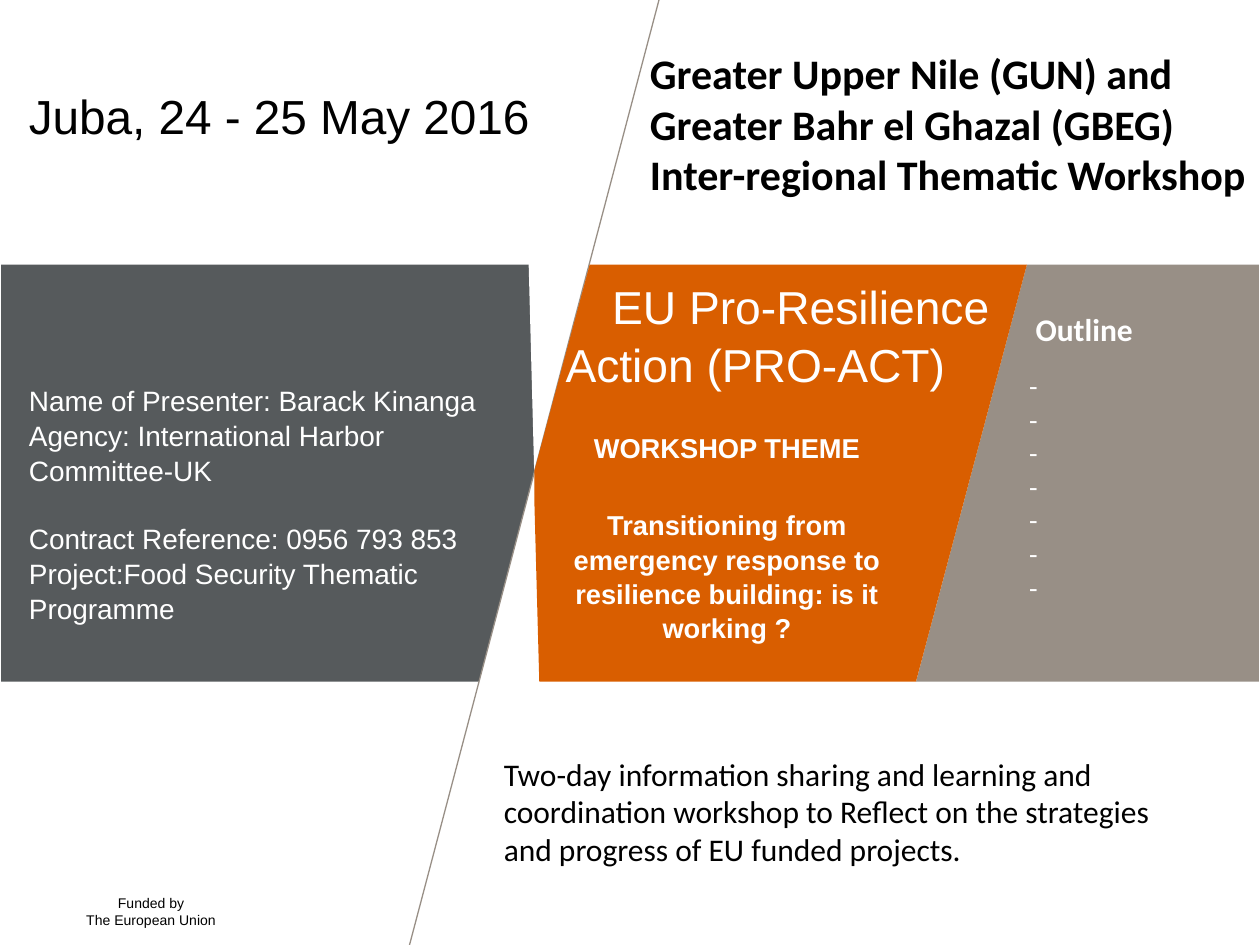
from lxml import etree
from pptx import Presentation
from pptx.dml.color import RGBColor
from pptx.enum.shapes import MSO_CONNECTOR, MSO_SHAPE
from pptx.enum.text import MSO_ANCHOR, PP_ALIGN
from pptx.oxml.ns import qn
from pptx.util import Inches, Pt

LEFT, CENTER = PP_ALIGN.LEFT, PP_ALIGN.CENTER
TOP, MIDDLE, BOTTOM = MSO_ANCHOR.TOP, MSO_ANCHOR.MIDDLE, MSO_ANCHOR.BOTTOM

BLACK = RGBColor(0x00, 0x00, 0x00)
WHITE = RGBColor(0xFF, 0xFF, 0xFF)
SLATE = RGBColor(0x56, 0x5A, 0x5C)
STONE = RGBColor(0x98, 0x8F, 0x86)
ORANGE = RGBColor(0xD9, 0x5E, 0x00)

# Horizontal band and the slanted rule that crosses the slide
BAND_TOP, BAND_END = 2.1, 5.41
RULE = [(5.23, 0), (3.25, 7.5)]
MID = (4.24, 3.75)
WEDGE = [(4.14, 0), MID, RULE[1], (4.33, 7.5), MID, RULE[0]]
GREY_PANEL = [(8.15, BAND_TOP), (9.99, BAND_TOP), (9.99, BAND_END), (7.27, BAND_END)]
THEME_PANEL = [(4.24, 3.74), (4.24, 3.95), (4.28, BAND_END), (7.27, BAND_END),
               (8.15, BAND_TOP), (4.68, BAND_TOP)]

# Each paragraph: text, points of space before
PRESENTER = [
    ("Name of Presenter: Barack Kinanga", 0),
    ("Agency: International Harbor Committee-UK", 0),
    ("Contract Reference: 0956 793 853", 19),
    ("Project:Food Security Thematic Programme", 0),
]
ACTION = [("EU Pro-Resilience Action (PRO-ACT)", 0)]
DATE = [("Juba, 24 - 25 May 2016", 0)]
OUTLINE = [("Outline", 0), ("-", 12)] + [("-", 0)] * 6
EVENT = [
    ("Greater Upper Nile (GUN) and Greater Bahr el Ghazal (GBEG)", 0),
    ("Inter-regional Thematic Workshop", 0),
]
THEME = [
    ("WORKSHOP THEME", 0),
    ("Transitioning from emergency response to resilience building: is it working ?", 24.5),
]
SUMMARY = [("Two-day information sharing and learning and coordination workshop to "
            "Reflect on the strategies and progress of EU funded projects.", 0)]
FUNDER = [("Funded by", 0), ("The European Union", 0)]


def add_panel(slide, points, color):
    points = [(Inches(x), Inches(y)) for x, y in points]
    pen = slide.shapes.build_freeform(*points[0], scale=1.0)
    pen.add_line_segments(points[1:], close=True)
    paint(pen.convert_to_shape(), color)


def paint(shape, color):
    shape.shadow.inherit = False
    shape.fill.solid()
    shape.fill.fore_color.rgb = color
    shape.line.fill.background()


def write(shape, box, lines, size, color, font="Arial", bold=False,
          align=LEFT, anchor=TOP, pitch=1.0, pads=(0.1, 0.05, 0.1, 0.05)):
    """Place a text shape and fill it; pads run left, top, right, bottom."""
    shape.left, shape.top, shape.width, shape.height = map(Inches, box)
    frame = shape.text_frame
    frame.word_wrap = True
    frame.vertical_anchor = anchor
    (frame.margin_left, frame.margin_top,
     frame.margin_right, frame.margin_bottom) = map(Inches, pads)
    for i, (text, gap) in enumerate(lines):
        para = frame.add_paragraph() if i else frame.paragraphs[0]
        para.text = text
        para.alignment = align
        para.line_spacing = pitch
        para.space_before = Pt(gap)
        para.font.name = font
        para.font.size = Pt(size)
        para.font.bold = bold
        para.font.color.rgb = color
    return frame.paragraphs


def add_text(slide, box, *args, **style):
    shape = slide.shapes.add_textbox(*map(Inches, box))
    return write(shape, box, *args, **style)


def indent(para, inches):
    para._p.get_or_add_pPr().set("indent", str(Inches(inches)))


def main():
    prs = Presentation()
    prs.slide_width, prs.slide_height = Inches(10), Inches(7.5)
    slide = prs.slides.add_slide(prs.slide_layouts[5])
    shapes = slide.shapes

    band = shapes.add_shape(MSO_SHAPE.RECTANGLE, Inches(0.01), Inches(BAND_TOP),
                            Inches(4.23), Inches(BAND_END - BAND_TOP))
    paint(band, SLATE)
    add_panel(slide, WEDGE, WHITE)
    rule = shapes.add_connector(MSO_CONNECTOR.STRAIGHT,
                                *(Inches(v) for point in RULE for v in point))
    rule.line.color.rgb = STONE
    rule.line.width = Pt(0.75)
    etree.SubElement(rule._element.spPr, qn("a:effectLst"))
    add_panel(slide, GREY_PANEL, STONE)
    add_panel(slide, THEME_PANEL, ORANGE)

    title = shapes.title
    shapes._spTree.append(title._element)  # bring in front of the panels
    write(title, (0.13, 2.08, 4.11, 3.01), PRESENTER, 16, WHITE,
          anchor=BOTTOM, pitch=1.04, pads=(0.1, 0.05, 0.1, 0.13))

    action = add_text(slide, (4.39, 2.09, 3.88, 1.11), ACTION, 26.4, WHITE,
                      anchor=MIDDLE, pitch=1.05)
    indent(action[0], 0.37)
    add_text(slide, (0.13, 0.18, 4.82, 1.47), DATE, 27.3, BLACK, anchor=MIDDLE)

    outline = add_text(slide, (8.07, 2.41, 1.98, 2.46), OUTLINE, 16, WHITE,
                       font="Calibri")
    outline[0].font.size = Pt(18)
    outline[0].font.bold = True
    indent(outline[0], 0.05)

    add_text(slide, (5.06, 0.33, 5, 1.31), EVENT, 24, BLACK,
             font="Calibri", bold=True)
    add_text(slide, (4.27, 3.21, 3, 2.23), THEME, 15.6, WHITE, bold=True,
             align=CENTER, pitch=1.05, pads=(0.1, 0.2, 0.1, 0.05))
    add_text(slide, (3.9, 5.94, 5.67, 1.31), SUMMARY, 18, BLACK, font="Calibri")
    add_text(slide, (0.52, 7.1, 1.36, 0.36), FUNDER, 8, BLACK,
             align=CENTER, pads=(0, 0, 0, 0))

    prs.save("out.pptx")


if __name__ == "__main__":
    main()
